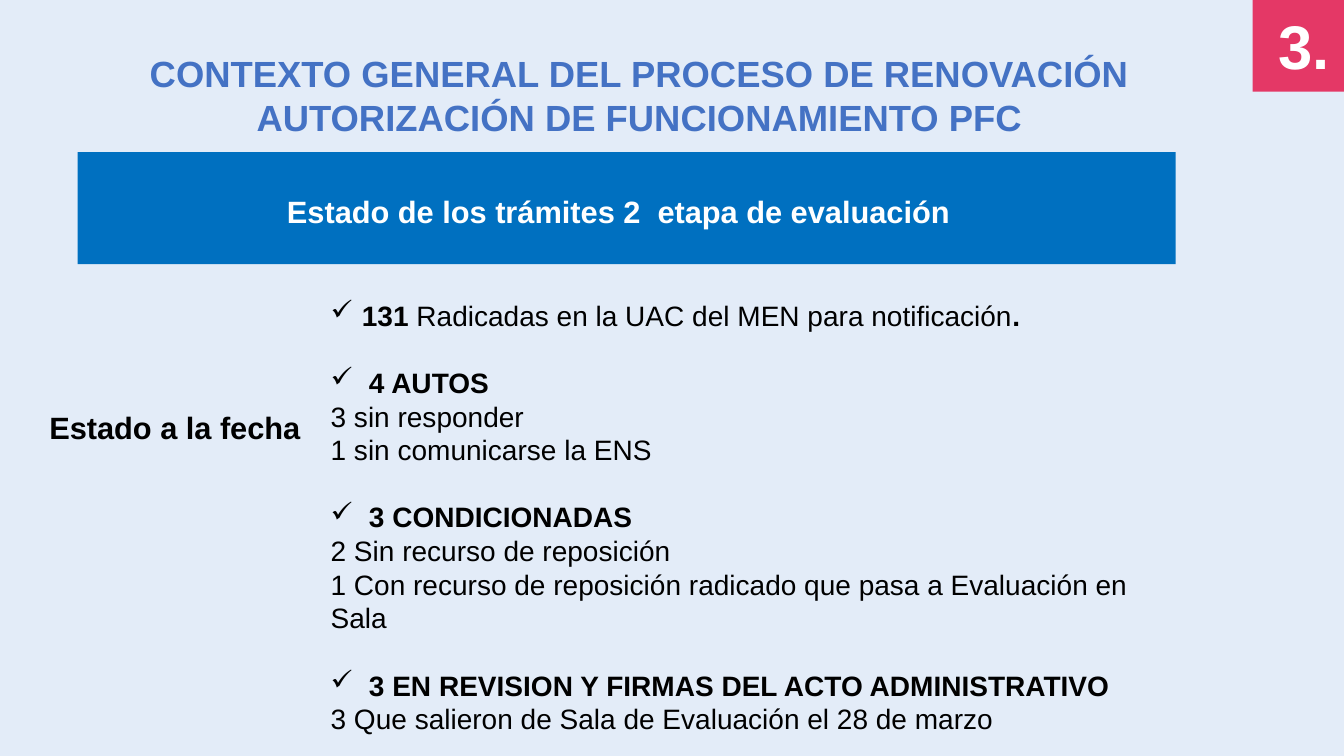
from lxml.etree import SubElement
from pptx import Presentation
from pptx.dml.color import RGBColor
from pptx.enum.shapes import MSO_SHAPE
from pptx.enum.text import MSO_ANCHOR, MSO_AUTO_SIZE, PP_ALIGN
from pptx.oxml.ns import qn
from pptx.util import Inches, Pt

BACKGROUND = RGBColor(0xE3, 0xEC, 0xF8)
PINK = RGBColor(0xE4, 0x38, 0x66)
BLUE = RGBColor(0x00, 0x70, 0xC0)
TITLE_BLUE = RGBColor(0x44, 0x72, 0xC4)
WHITE = RGBColor(0xFF, 0xFF, 0xFF)
BLACK = RGBColor(0x00, 0x00, 0x00)
WIDTH, HEIGHT = Inches(13.33), Inches(7.5)

STATUS = [
    (0.31, [("131 ", True), ("Radicadas en la UAC del MEN para notificación", False), (".", True)], []),
    (0.38, [("4 AUTOS", True)], ["3 sin responder", "1 sin comunicarse la ENS"]),
    (0.38, [("3 CONDICIONADAS", True)],
     ["2 Sin recurso de reposición",
      "1 Con recurso de reposición radicado que pasa a Evaluación en Sala"]),
    (0.38, [("3 EN REVISION Y FIRMAS DEL ACTO ADMINISTRATIVO", True)],
     ["3 Que salieron de Sala de Evaluación el 28 de marzo"]),
]


def area(left, top, width, height):
    """Turn percentages of the slide into lengths."""
    return (int(WIDTH * left / 100), int(HEIGHT * top / 100),
            int(WIDTH * width / 100), int(HEIGHT * height / 100))


def style(r, size, color, bold=True):
    """Format one run."""
    r.font.name = "Arial"
    r.font.size = Pt(size)
    r.font.bold = bold
    r.font.color.rgb = color


def write(sp, text, size, color, align=PP_ALIGN.CENTER):
    """Put one bold paragraph into a shape and return its frame."""
    tf = sp.text_frame
    tf.text = text
    tf.word_wrap = True
    tf.auto_size = MSO_AUTO_SIZE.NONE
    p = tf.paragraphs[0]
    p.alignment = align
    style(p.runs[0], size, color)
    return tf


def add_block(s, box, color):
    """Add a plain filled rectangle."""
    sp = s.shapes.add_shape(MSO_SHAPE.RECTANGLE, *area(*box))
    sp.shadow.inherit = False
    sp.fill.solid()
    sp.fill.fore_color.rgb = color
    sp.line.fill.background()
    return sp


def add_label(s, box, text, size, color, align=PP_ALIGN.CENTER):
    """Add a text box with one bold line."""
    return write(s.shapes.add_textbox(*area(*box)), text, size, color, align)


def set_title(s, box, text):
    """Move and format the title placeholder."""
    sp = s.shapes.title
    sp.left, sp.top, sp.width, sp.height = area(*box)
    tf = write(sp, text, 26, TITLE_BLUE)
    tf.vertical_anchor = MSO_ANCHOR.TOP
    tf.paragraphs[0].line_spacing = Pt(31.4)


def add_check(p, indent):
    """Give a paragraph a hanging check mark."""
    pPr = p._p.get_or_add_pPr()
    pPr.set("marL", str(Inches(indent)))
    pPr.set("indent", str(-Inches(indent)))
    SubElement(pPr, qn("a:buChar"), char="✓")


def add_status(s, box, groups):
    """Add the checked headings with their detail lines."""
    tf = s.shapes.add_textbox(*area(*box)).text_frame
    tf.word_wrap = True
    for i, (indent, heading, details) in enumerate(groups):
        for j, parts in enumerate([heading] + [[(d, False)] for d in details]):
            p = tf.add_paragraph() if i or j else tf.paragraphs[0]
            p.line_spacing = Pt(24)
            p.space_before = Pt(24 if i and not j else 0)
            if not j:
                add_check(p, indent)
            for text, bold in parts:
                r = p.add_run()
                r.text = text
                style(r, 20, BLACK, bold)


def main():
    """Build the slide and save it."""
    prs = Presentation()
    prs.slide_width, prs.slide_height = WIDTH, HEIGHT
    s = prs.slides.add_slide(prs.slide_layouts[5])
    s.background.fill.solid()
    s.background.fill.fore_color.rgb = BACKGROUND

    add_block(s, (93.2, 0, 6.8, 12.13), PINK)
    add_label(s, (94.37, 0.4, 5.63, 11.2), "3.", 44, WHITE, PP_ALIGN.LEFT)
    banner = add_block(s, (5.78, 20.13, 81.7, 14.8), BLUE)
    tf = write(banner, "Estado de los trámites 2  etapa de evaluación", 22, WHITE)
    tf.vertical_anchor = MSO_ANCHOR.MIDDLE
    tf.margin_right, tf.margin_top = Inches(0.26), Inches(0.1)
    set_title(s, (6.75, 6, 81.7, 13.07),
              "CONTEXTO GENERAL DEL PROCESO DE RENOVACIÓN AUTORIZACIÓN DE FUNCIONAMIENTO PFC")
    add_label(s, (1.5, 53.47, 23.03, 6.27), "Estado a la fecha", 22, BLACK)
    add_status(s, (23.86, 38.8, 63.62, 59.73), STATUS)
    prs.save("out.pptx")


if __name__ == "__main__":
    main()
